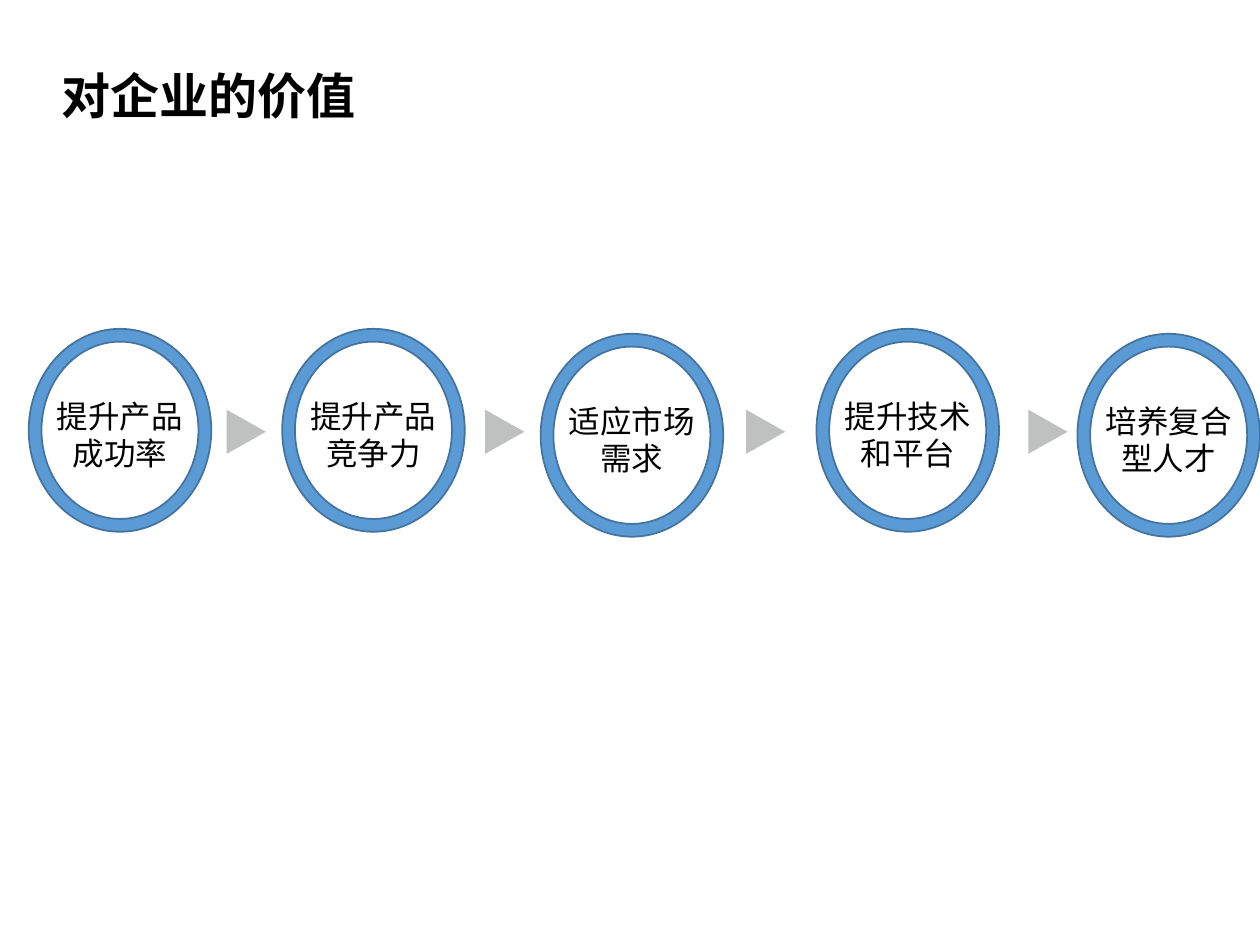
"""Build a slide with five linked rings that show the value to a company."""
import pptx
import pptx.dml.color
import pptx.enum.shapes
import pptx.enum.text
import pptx.util

Cm = pptx.util.Cm
Pt = pptx.util.Pt
KIND = pptx.enum.shapes.MSO_SHAPE
ALIGN = pptx.enum.text.PP_ALIGN

TITLE = "对企业的价值"
STEPS = [
    ("提升产品成功率", 0.58, 6.63),
    ("提升产品竞争力", 5.69, 6.63),
    ("适应市场需求", 10.9, 6.73),
    ("提升技术和平台", 16.46, 6.63),
    ("培养复合型人才", 21.72, 6.73),
]
ARROWS = [4.52, 9.73, 14.99, 20.68]
RING_W, RING_H = 3.68, 4.09
TEXT_W, TEXT_H = 3.43, 1.8


def color(code):
    return pptx.dml.color.RGBColor.from_string(code)


def add_text(slide, text, box, size, align, bold=False):
    frame = slide.shapes.add_textbox(*map(Cm, box)).text_frame
    frame.word_wrap = True
    frame.text = text
    para = frame.paragraphs[0]
    para.alignment = align
    font = para.runs[0].font
    font.name = "Calibri"
    font.size = Pt(size)
    font.bold = bold
    font.color.rgb = color("000000")


def add_form(slide, kind, box, fill, line=None):
    form = slide.shapes.add_shape(kind, *map(Cm, box))
    form.shadow.inherit = False
    form.fill.solid()
    form.fill.fore_color.rgb = color(fill)
    if line:
        form.line.color.rgb = color(line)
        form.line.width = Pt(1)
    else:
        form.line.fill.background()
    return form


def main():
    deck = pptx.Presentation()
    deck.slide_width, deck.slide_height = Cm(25.4), Cm(19.05)
    slide = deck.slides.add_slide(deck.slide_layouts[6])
    for text, left, top in STEPS:
        box = (left + (RING_W - TEXT_W) / 2, top + 1.24, TEXT_W, TEXT_H)
        add_text(slide, text, box, 18, ALIGN.CENTER)
        ring = add_form(slide, KIND.DONUT, (left, top, RING_W, RING_H),
                        "5B9BD5", "43739E")
        ring.adjustments[0] = 0.07
    for left in ARROWS:
        arrow = add_form(slide, KIND.ISOSCELES_TRIANGLE,
                         (left, 8.31, 0.89, 0.79), "BFC0C0")
        arrow.rotation = 90
    add_text(slide, TITLE, (0.99, 1.19, 9.55, 1.45), 28, ALIGN.LEFT, True)
    deck.save("out.pptx")


if __name__ == "__main__":
    main()
